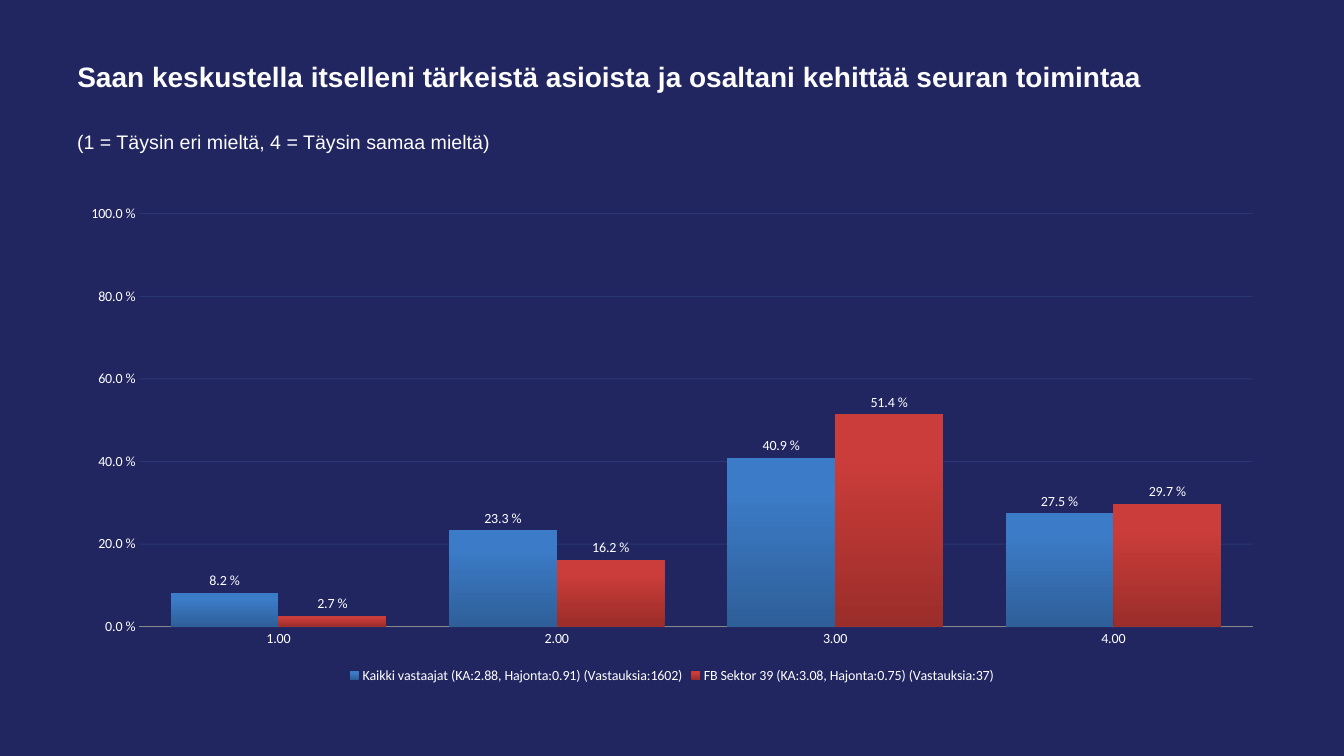
import pptx
import pptx.chart.data
import pptx.dml.color
import pptx.enum.chart
import pptx.enum.text
import pptx.oxml
import pptx.oxml.ns
import pptx.util

Pt = pptx.util.Pt
Kind = pptx.enum.chart
Align = pptx.enum.text

COLORS = {
    "back": "212560",
    "text": "FCFCFC",
    "label": "FFFFFF",
    "grid": "4F81BD",
    "axis": "868686",
}
SHADES = [("2E5F99", "3C7BC7"), ("9B2D2A", "CB3D3A")]
FORMAT = r"0.0\ %"
CATS = ["1.00", "2.00", "3.00", "4.00"]
SERIES = [
    ("Kaikki vastaajat (KA:2.88, Hajonta:0.91) (Vastauksia:1602)",
     [0.082, 0.233, 0.409, 0.275]),
    ("FB Sektor 39 (KA:3.08, Hajonta:0.75) (Vastauksia:37)",
     [0.027, 0.162, 0.514, 0.297]),
]


def rgb(code):
    return pptx.dml.color.RGBColor.from_string(code)


def write(shape, text, size, bold, anchor):
    frame = shape.text_frame
    frame.word_wrap = True
    frame.auto_size = Align.MSO_AUTO_SIZE.NONE
    frame.vertical_anchor = anchor
    para = frame.paragraphs[0]
    para.alignment = Align.PP_ALIGN.LEFT
    run = para.add_run()
    run.text = text
    font = run.font
    font.name, font.size, font.bold = "Arial", Pt(size), bold
    font.color.rgb = rgb(COLORS["text"])


def head(slide, x, y, w, h):
    """Place the question and, below it, its scale."""
    title = slide.shapes.title
    title.left, title.top, title.width, title.height = Pt(x), Pt(y), Pt(w), Pt(57)
    write(title, "Saan keskustella itselleni tärkeistä asioista ja osaltani "
          "kehittää seuran toimintaa", 20, True, Align.MSO_ANCHOR.MIDDLE)
    scale = slide.shapes.add_textbox(Pt(x), Pt(y + h - 42), Pt(w), Pt(42))
    write(scale, "(1 = Täysin eri mieltä, 4 = Täysin samaa mieltä)",
          14, False, Align.MSO_ANCHOR.TOP)


def style_axes(chart):
    cat, val = chart.category_axis, chart.value_axis
    for axis in (cat, val):
        axis.major_tick_mark = axis.minor_tick_mark = Kind.XL_TICK_MARK.NONE
    cat.format.line.color.rgb = rgb(COLORS["axis"])
    cat.format.line.width = Pt(0.75)

    val.minimum_scale, val.maximum_scale, val.major_unit = 0, 1, 0.2
    val.tick_labels.number_format = FORMAT
    val.tick_labels.number_format_is_linked = False
    val.format.line.fill.background()
    grid = val.major_gridlines.format.line
    grid.color.rgb = rgb(COLORS["grid"])
    grid.width = Pt(0.75)
    lines = val.major_gridlines._xAx.find(pptx.oxml.ns.qn("c:majorGridlines"))
    tint = next(lines.iter(pptx.oxml.ns.qn("a:srgbClr")))
    tint.append(pptx.oxml.parse_xml(
        f'<a:alpha {pptx.oxml.ns.nsdecls("a")} val="20000"/>'))


def style_bars(plot):
    plot.gap_width, plot.overlap, plot.vary_by_categories = 58, 0, False
    for bar, shades in zip(plot.series, SHADES):
        fill = bar.format.fill
        fill.gradient()
        fill.gradient_angle = 90
        for stop, shade, place in zip(fill.gradient_stops, shades, (0, 0.8)):
            stop.color.rgb = rgb(shade)
            stop.position = place
        labels = bar.data_labels
        labels.show_value = True
        labels.number_format = FORMAT
        labels.number_format_is_linked = False
        labels.position = Kind.XL_LABEL_POSITION.OUTSIDE_END


def answers(slide, x, y, w, h):
    data = pptx.chart.data.CategoryChartData()
    data.categories = CATS
    for name, values in SERIES:
        data.add_series(name, values)
    chart = slide.shapes.add_chart(
        Kind.XL_CHART_TYPE.COLUMN_CLUSTERED, Pt(x), Pt(y), Pt(w), Pt(h), data).chart
    chart.has_title = False
    chart.font.name, chart.font.size = "Calibri", Pt(10)
    chart.font.color.rgb = rgb(COLORS["label"])
    chart.has_legend = True
    chart.legend.position = Kind.XL_LEGEND_POSITION.BOTTOM
    chart.legend.include_in_layout = False
    style_axes(chart)
    style_bars(chart.plots[0])


def main():
    deck = pptx.Presentation()
    deck.slide_width, deck.slide_height = Pt(960), Pt(540)
    slide = deck.slides.add_slide(deck.slide_layouts[5])
    slide.background.fill.solid()
    slide.background.fill.fore_color.rgb = rgb(COLORS["back"])
    head(slide, 48, 26, 864, 105)
    answers(slide, 48, 140, 864, 351)
    deck.save("out.pptx")


if __name__ == "__main__":
    main()
